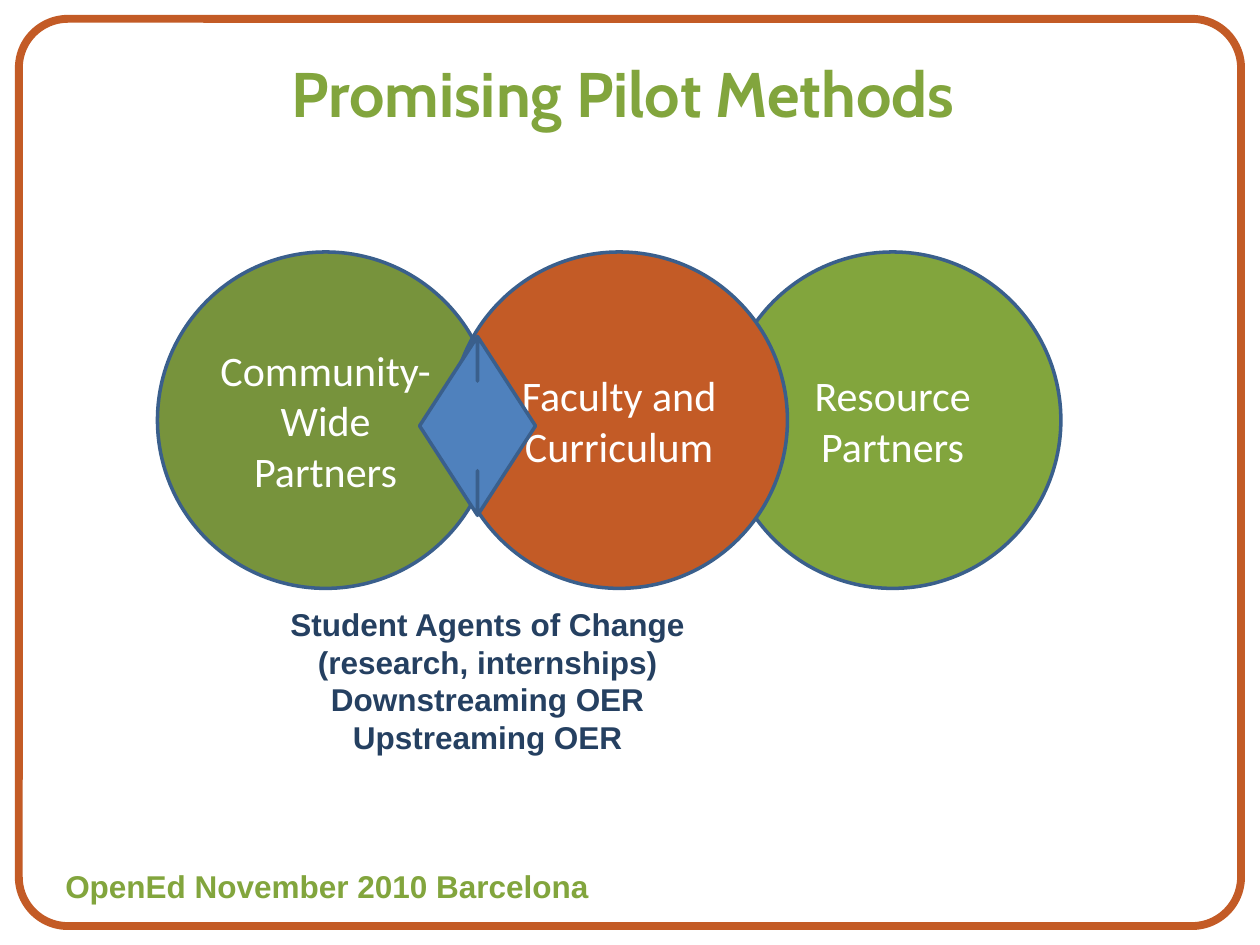
from pptx import Presentation
from pptx.dml.color import RGBColor
from pptx.enum.shapes import MSO_SHAPE
from pptx.enum.text import MSO_ANCHOR, PP_ALIGN
from pptx.util import Inches, Pt

ROUNDED = MSO_SHAPE.ROUNDED_RECTANGLE
OVAL = MSO_SHAPE.OVAL
ARROW = MSO_SHAPE.LEFT_RIGHT_ARROW
TOP, MIDDLE = MSO_ANCHOR.TOP, MSO_ANCHOR.MIDDLE
LEFT, CENTER = PP_ALIGN.LEFT, PP_ALIGN.CENTER

WHITE = RGBColor(0xFF, 0xFF, 0xFF)
ORANGE = RGBColor(0xC3, 0x5B, 0x26)
GREEN = RGBColor(0x82, 0xA5, 0x3D)
OLIVE = RGBColor(0x77, 0x93, 0x3C)
BLUE = RGBColor(0x4F, 0x81, 0xBD)
OUTLINE = RGBColor(0x3A, 0x5F, 0x8C)
NAVY = RGBColor(0x25, 0x40, 0x61)


def add_figure(slide, kind, x, y, w, h, fill, line, weight):
    sp = slide.shapes.add_shape(kind, Inches(x), Inches(y), Inches(w), Inches(h))
    sp.shadow.inherit = False
    if fill is None:
        sp.fill.background()
    else:
        sp.fill.solid()
        sp.fill.fore_color.rgb = fill
    sp.line.color.rgb = line
    sp.line.width = Pt(weight)
    return sp


def write(sp, lines, font, size, color, bold=False, align=CENTER, anchor=TOP):
    tf = sp.text_frame
    tf.word_wrap = True
    tf.vertical_anchor = anchor
    for i, line in enumerate(lines):
        p = tf.paragraphs[0] if i == 0 else tf.add_paragraph()
        p.alignment = align
        r = p.add_run()
        r.text = line
        r.font.name = font
        r.font.size = Pt(size)
        r.font.bold = bold
        r.font.color.rgb = color


def add_text(slide, x, y, w, h, lines, font, size, color, **style):
    sp = slide.shapes.add_textbox(Inches(x), Inches(y), Inches(w), Inches(h))
    write(sp, lines, font, size, color, bold=True, **style)


def add_frame(slide, x, y, w, h):
    sp = add_figure(slide, ROUNDED, x, y, w, h, None, ORANGE, 4.5)
    sp.adjustments[0] = 0.054
    add_text(slide, x + 0.27, y + h - 0.52, 5.17, 0.4,
             ["OpenEd November 2010 Barcelona"], "Arial", 18, GREEN, align=LEFT)


def add_title(slide, x, y, w, h):
    add_text(slide, x, y, w, h, ["Promising Pilot Methods "],
             "Cabin", 36, GREEN, anchor=MIDDLE)


def add_partners(slide, x, y, size):
    circles = [
        (4.5, GREEN, "Resource Partners"),
        (0, OLIVE, "Community-Wide Partners"),
        (2.33, ORANGE, "Faculty and Curriculum"),
    ]
    for offset, fill, label in circles:
        sp = add_figure(slide, OVAL, x + offset, y, size, size, fill, OUTLINE, 2)
        write(sp, [label], "Calibri", 24, WHITE, anchor=MIDDLE)


def add_student_link(slide, x, y, w, h):
    add_text(slide, x, y + 2.08, 4.08, 1.31,
             ["Student Agents of Change (research, internships)",
              "Downstreaming OER", "Upstreaming OER"], "Arial", 18, NAVY)
    add_figure(slide, ARROW, x + 1.5, y, w, h, BLUE, OUTLINE, 2)


def main():
    prs = Presentation()
    prs.slide_width, prs.slide_height = Inches(10), Inches(7.5)
    slide = prs.slides.add_slide(prs.slide_layouts[6])
    add_frame(slide, 0.15, 0.15, 9.7, 7.2)
    add_title(slide, 0.5, 0.3, 9, 0.87)
    add_partners(slide, 1.25, 2, 2.67)
    add_student_link(slide, 1.83, 2.67, 0.92, 1.42)
    prs.save("out.pptx")


if __name__ == "__main__":
    main()
